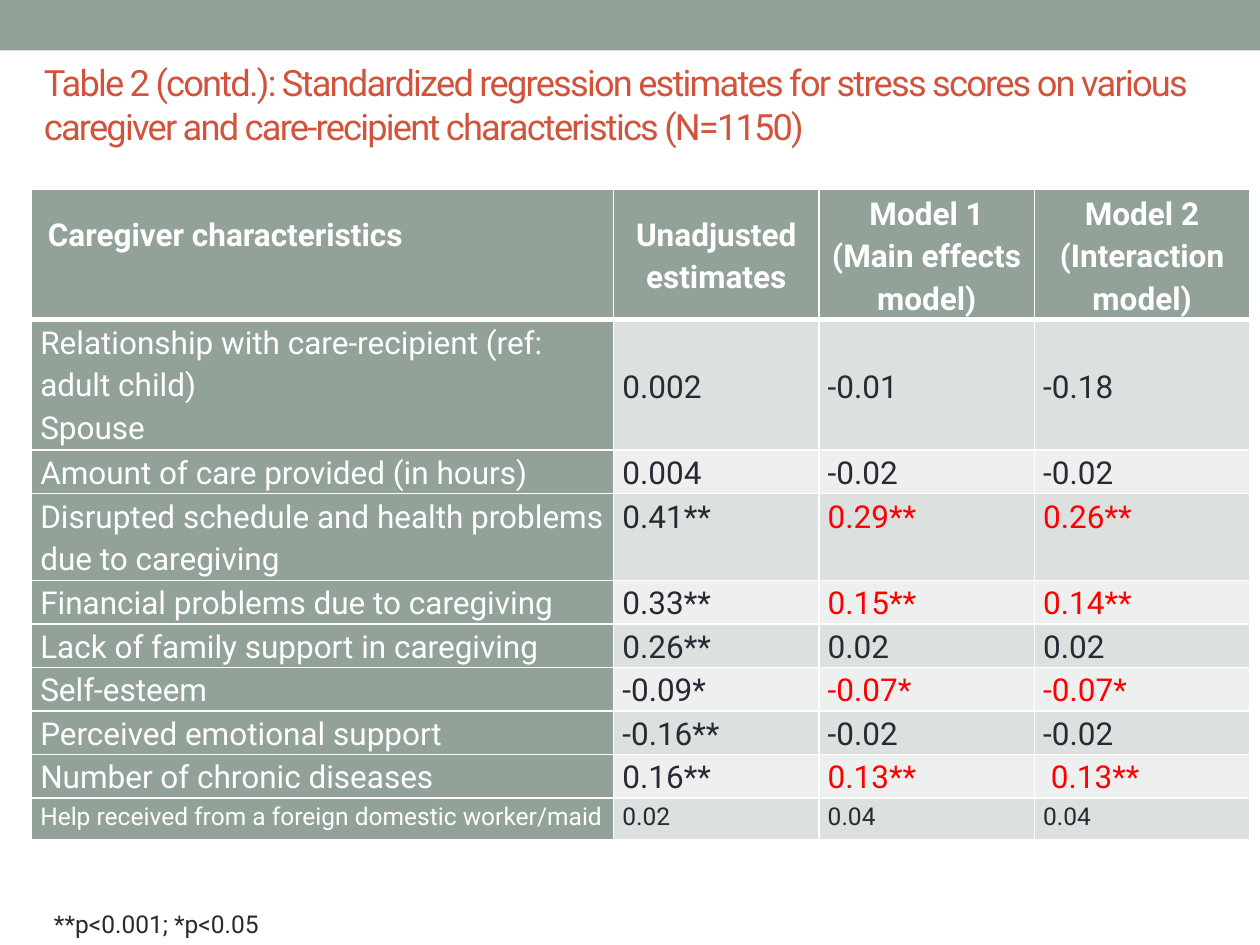
"""Build the slide with the regression table for caregiver stress scores."""
from lxml.etree import SubElement
from pptx import Presentation
from pptx.dml.color import RGBColor
from pptx.enum.shapes import MSO_SHAPE
from pptx.enum.text import MSO_ANCHOR, PP_ALIGN
from pptx.oxml.ns import qn
from pptx.util import Inches, Pt

FONT = "Roboto"
COLORS = {
    "sage": "93A299", "title": "D2533C", "ink": "292934", "white": "FFFFFF",
    "significant": "FF0000", "odd": "DCE0DE", "even": "EEF0EF",
}
COLUMN_WIDTHS = [4.62, 1.63, 1.71, 1.71]
ROW_HEIGHTS = [1, 1, 0.34, 0.67, 0.34, 0.34, 0.34, 0.34, 0.34, 0.33]
HEADINGS = [
    "Caregiver characteristics", "Unadjusted estimates",
    "Model 1\n(Main effects model)", "Model 2\n(Interaction model)",
]
ESTIMATES = [
    ("Relationship with care-recipient (ref: adult child)\nSpouse", "0.002", "-0.01", "-0.18"),
    ("Amount of care provided (in hours)", "0.004", "-0.02", "-0.02"),
    ("Disrupted schedule and health problems due to caregiving", "0.41**", "0.29**", "0.26**"),
    ("Financial problems due to caregiving", "0.33**", "0.15**", "0.14**"),
    ("Lack of family support in caregiving", "0.26**", "0.02", "0.02"),
    ("Self-esteem", "-0.09*", "-0.07*", "-0.07*"),
    ("Perceived emotional support", "-0.16**", "-0.02", "-0.02"),
    ("Number of chronic diseases", "0.16**", "0.13**", " 0.13**"),
    ("Help received from a foreign domestic worker/maid", "0.02", "0.04", "0.04"),
]


def rgb(name):
    """Return the named colour."""
    return RGBColor.from_string(COLORS[name])


def style_paragraph(paragraph, size, color, bold=False):
    """Set the font of a whole paragraph."""
    font = paragraph.font
    font.name, font.size, font.bold = FONT, Pt(size), bold
    font.color.rgb = rgb(color)


def add_band(slide):
    """Draw the band along the top edge."""
    band = slide.shapes.add_shape(MSO_SHAPE.RECTANGLE, 0, 0, Inches(10), Inches(0.4))
    band.shadow.inherit = False
    band.fill.solid()
    band.fill.fore_color.rgb = rgb("sage")
    band.line.fill.background()


def add_text(slide, box, text, size, color, wrap=True):
    """Add a one-paragraph text box and return its frame."""
    frame = slide.shapes.add_textbox(*map(Inches, box)).text_frame
    frame.word_wrap = wrap
    frame.vertical_anchor = MSO_ANCHOR.MIDDLE
    frame.text = text
    style_paragraph(frame.paragraphs[0], size, color)
    return frame


def add_title(slide):
    """Add the tightly spaced slide title."""
    frame = add_text(
        slide, (0.25, 0.5, 9.33, 0.92),
        "Table 2 (contd.): Standardized regression estimates for stress scores on various "
        "caregiver and care-recipient characteristics (N=1150)", 20.7, "title")
    frame.margin_top, frame.margin_bottom = 0, Inches(0.27)
    for run in frame.paragraphs[0].runs:
        run.font._element.set("spc", "-100")


def set_borders(cell, top, bottom):
    """Give a cell white borders, with top and bottom widths in points."""
    properties = cell._tc.get_or_add_tcPr()
    for side, width in (("L", 1), ("R", 1), ("T", top), ("B", bottom)):
        line = SubElement(properties, qn(f"a:ln{side}"), w=str(Pt(width)))
        SubElement(SubElement(line, qn("a:solidFill")), qn("a:srgbClr"), val=COLORS["white"])


def fill_cell(cell, text, fill, color, size=18, bold=False, align=PP_ALIGN.LEFT):
    """Write and colour one table cell."""
    cell.margin_left = cell.margin_right = Inches(0.07)
    cell.margin_top = cell.margin_bottom = 0
    cell.fill.solid()
    cell.fill.fore_color.rgb = rgb(fill)
    cell.text = text
    for paragraph in cell.text_frame.paragraphs:
        paragraph.alignment = align
        paragraph.line_spacing = 1.15
        style_paragraph(paragraph, size, color, bold)


def fill_headings(table):
    """Fill the heading row."""
    for column, heading in enumerate(HEADINGS):
        cell = table.cell(0, column)
        set_borders(cell, 1, 3)
        fill_cell(cell, heading, "sage", "white", bold=True,
                  align=PP_ALIGN.CENTER if column else PP_ALIGN.LEFT)
        cell.vertical_anchor = MSO_ANCHOR.MIDDLE
    characteristics = table.cell(0, 0)
    characteristics.margin_left = Inches(0.13)
    characteristics.margin_bottom = Inches(0.33)


def fill_estimates(table):
    """Fill the rows of estimates, with significant model effects in red."""
    for row, values in enumerate(ESTIMATES, 1):
        size = 14 if row == len(ESTIMATES) else 18
        for column, value in enumerate(values):
            cell = table.cell(row, column)
            set_borders(cell, 3 if row == 1 else 1, 1)
            if column == 0:
                fill, color = "sage", "white"
            else:
                fill = "odd" if row % 2 else "even"
                color = "significant" if column > 1 and "*" in value else "ink"
            fill_cell(cell, value, fill, color, size)
            if row == 1 and column:
                cell.vertical_anchor = MSO_ANCHOR.MIDDLE


def add_estimate_table(slide):
    """Add the regression table."""
    table = slide.shapes.add_table(
        len(ROW_HEIGHTS), len(COLUMN_WIDTHS), Inches(0.25), Inches(1.5),
        Inches(sum(COLUMN_WIDTHS)), Inches(sum(ROW_HEIGHTS))).table
    for column, width in zip(table.columns, COLUMN_WIDTHS):
        column.width = Inches(width)
    for row, height in zip(table.rows, ROW_HEIGHTS):
        row.height = Inches(height)
    fill_headings(table)
    fill_estimates(table)


def main():
    """Build and save the slide."""
    presentation = Presentation()
    presentation.slide_width, presentation.slide_height = Inches(10), Inches(7.5)
    slide = presentation.slides.add_slide(presentation.slide_layouts[6])
    add_band(slide)
    add_title(slide)
    add_estimate_table(slide)
    add_text(slide, (0.33, 7.16, 2.02, 0.34), "**p<0.001; *p<0.05", 14, "ink", wrap=False)
    presentation.save("out.pptx")


if __name__ == "__main__":
    main()
